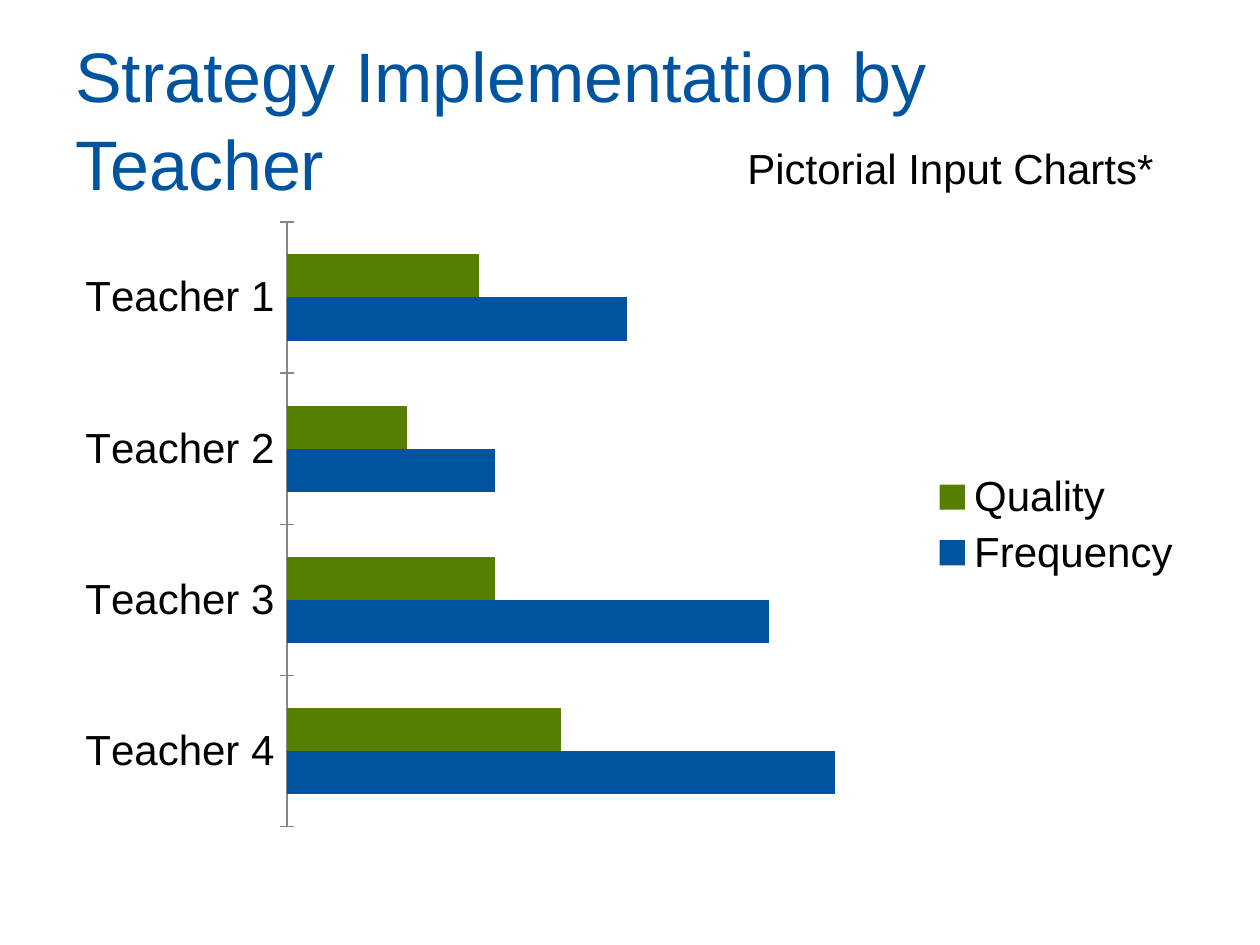
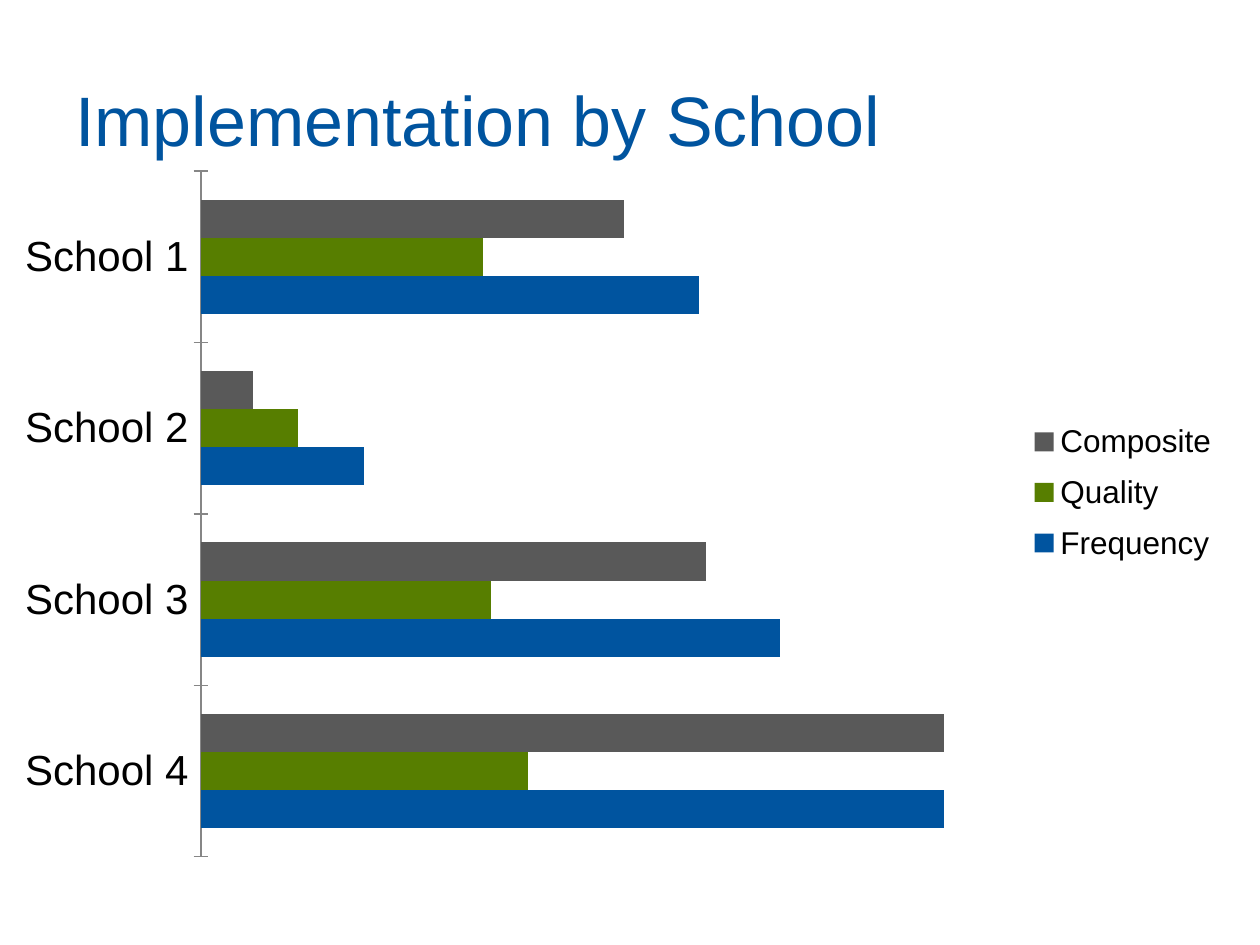
"""Build two slides of bar charts on strategy implementation."""
from dataclasses import dataclass

from pptx import Presentation
from pptx.chart.chart import Chart
from pptx.chart.data import CategoryChartData
from pptx.dml.color import RGBColor
from pptx.enum.chart import XL_CHART_TYPE, XL_LEGEND_POSITION, XL_TICK_LABEL_POSITION, XL_TICK_MARK
from pptx.enum.text import MSO_ANCHOR
from pptx.oxml import parse_xml
from pptx.oxml.ns import nsdecls
from pptx.slide import Slide
from pptx.util import Emu, Pt

CLUSTERED_BARS = XL_CHART_TYPE.BAR_CLUSTERED
LEGEND_RIGHT = XL_LEGEND_POSITION.RIGHT
TICK_CROSS = XL_TICK_MARK.CROSS
LABELS_LOW = XL_TICK_LABEL_POSITION.LOW
MIDDLE, TOP = MSO_ANCHOR.MIDDLE, MSO_ANCHOR.TOP

PX_PER_INCH = 126
FONT = "Arial"
BLUE, GREEN, GREY = "00549F", "577E00", "595959"
BLACK, WHITE, AXIS_GREY = "000000", "FFFFFF", "868686"
SERIES_COLOURS = {"Frequency": BLUE, "Quality": GREEN, "Composite": GREY}


@dataclass(frozen=True)
class Box:
    """A rectangle on the slide in px."""
    left: int
    top: int
    width: int
    height: int

    def emu(self) -> tuple[Emu, Emu, Emu, Emu]:
        """Return the rectangle in EMU."""
        return px(self.left), px(self.top), px(self.width), px(self.height)


@dataclass(frozen=True)
class Label:
    """A piece of text with its place and style."""
    text: str
    box: Box
    size: int
    colour: str
    anchor: MSO_ANCHOR = TOP
    line_spacing: float = 1.0


@dataclass(frozen=True)
class Ratings:
    """A bar chart of implementation ratings."""
    unit: str
    scores: dict[str, tuple[int, ...]]
    frame: Box
    plot: Box
    legend_size: int
    legend: Box | None = None


def px(length: int) -> Emu:
    """Convert px to EMU."""
    return Emu(round(length * 914400 / PX_PER_INCH))


def rgb(colour: str) -> RGBColor:
    """Turn a hex string into a colour."""
    return RGBColor.from_string(colour)


def title(text: str) -> Label:
    """Describe a slide title."""
    return Label(text, Box(63, 38, 1134, 157), 40, BLUE, MIDDLE, 1.05)


def style_font(font, size: int, colour: str = BLACK) -> None:
    """Set the shared typeface with a size and colour."""
    font.name, font.size, font.bold = FONT, Pt(size), False
    font.color.rgb = rgb(colour)


def draw_label(slide: Slide, label: Label) -> None:
    """Draw one label as a text box."""
    frame = slide.shapes.add_textbox(*label.box.emu()).text_frame
    frame.word_wrap = True
    frame.vertical_anchor = label.anchor
    paragraph = frame.paragraphs[0]
    paragraph.text = label.text
    paragraph.line_spacing = label.line_spacing
    style_font(paragraph.font, label.size, label.colour)


def layout_xml(area: Box, frame: Box, target: str = ""):
    """Express an area as fractions of its chart frame."""
    fractions = {
        "x": (area.left - frame.left) / frame.width,
        "y": (area.top - frame.top) / frame.height,
        "w": area.width / frame.width,
        "h": area.height / frame.height,
    }
    modes = '<c:xMode val="edge"/><c:yMode val="edge"/>'
    values = "".join(f'<c:{key} val="{value:.4f}"/>' for key, value in fractions.items())
    return parse_xml(f'<c:layout {nsdecls("c")}><c:manualLayout>{target}{modes}{values}'
                     "</c:manualLayout></c:layout>")


def place_parts(chart: Chart, ratings: Ratings) -> None:
    """Fix the plot area and, where given, the legend."""
    plot_area = chart.element.xpath("c:chart/c:plotArea")[0]
    for old in plot_area.xpath("c:layout"):
        plot_area.remove(old)
    plot_area.insert(0, layout_xml(ratings.plot, ratings.frame, '<c:layoutTarget val="inner"/>'))
    if ratings.legend:
        legend = chart.element.xpath("c:chart/c:legend")[0]
        for old in legend.xpath("c:layout"):
            legend.remove(old)
        legend.xpath("c:legendPos")[0].addnext(layout_xml(ratings.legend, ratings.frame))


def style_axes(chart: Chart) -> None:
    """Show the category axis and hide the value axis."""
    units = chart.category_axis
    units.major_tick_mark = TICK_CROSS
    units.tick_label_position = LABELS_LOW
    units.format.line.color.rgb = rgb(AXIS_GREY)
    units.format.line.width = Pt(0.75)
    style_font(units.tick_labels.font, 24)
    scale = chart.value_axis
    scale.minimum_scale, scale.maximum_scale = 0, 100
    scale.visible = False
    scale.has_major_gridlines = True
    scale.major_gridlines.format.line.color.rgb = rgb(WHITE)
    scale.major_gridlines.format.line.width = Pt(0.75)


def draw_ratings(slide: Slide, ratings: Ratings) -> None:
    """Draw the bar chart with its legend."""
    data = CategoryChartData()
    data.categories = [f"{ratings.unit} {number}" for number in range(4, 0, -1)]
    for name, values in ratings.scores.items():
        data.add_series(name, values)
    chart = slide.shapes.add_chart(CLUSTERED_BARS, *ratings.frame.emu(), data).chart
    chart.has_title = False
    style_font(chart.font, 18)
    bars = chart.plots[0]
    bars.gap_width, bars.overlap, bars.vary_by_categories = 150, 0, False
    for series in bars.series:
        series.format.fill.solid()
        series.format.fill.fore_color.rgb = rgb(SERIES_COLOURS[series.name])
    style_axes(chart)
    chart.has_legend = True
    chart.legend.position = LEGEND_RIGHT
    chart.legend.include_in_layout = False
    style_font(chart.legend.font, ratings.legend_size)
    place_parts(chart, ratings)


TEACHER_RATINGS = Ratings(
    "Teacher",
    {"Frequency": (100, 88, 38, 62), "Quality": (50, 38, 22, 35)},
    frame=Box(63, 210, 1134, 630),
    plot=Box(287, 222, 548, 605),
    legend_size=24,
)
SCHOOL_RATINGS = Ratings(
    "School",
    {"Frequency": (100, 78, 22, 67), "Quality": (44, 39, 13, 38), "Composite": (100, 68, 7, 57)},
    frame=Box(0, 158, 1260, 714),
    plot=Box(201, 171, 743, 686),
    legend_size=18,
    legend=Box(1003, 409, 240, 167),
)
STRATEGY = Label("Pictorial Input Charts*", Box(735, 136, 441, 63), 24, BLACK)
SLIDES = (
    (TEACHER_RATINGS, (title("Strategy Implementation by Teacher"), STRATEGY)),
    (SCHOOL_RATINGS, (title("Implementation by School"),)),
)


def main() -> None:
    """Build and save the presentation."""
    deck = Presentation()
    deck.slide_width, deck.slide_height = px(1260), px(945)
    blank = deck.slide_layouts[6]
    for ratings, labels in SLIDES:
        slide = deck.slides.add_slide(blank)
        draw_ratings(slide, ratings)
        for label in labels:
            draw_label(slide, label)
    deck.save("out.pptx")


if __name__ == "__main__":
    main()
